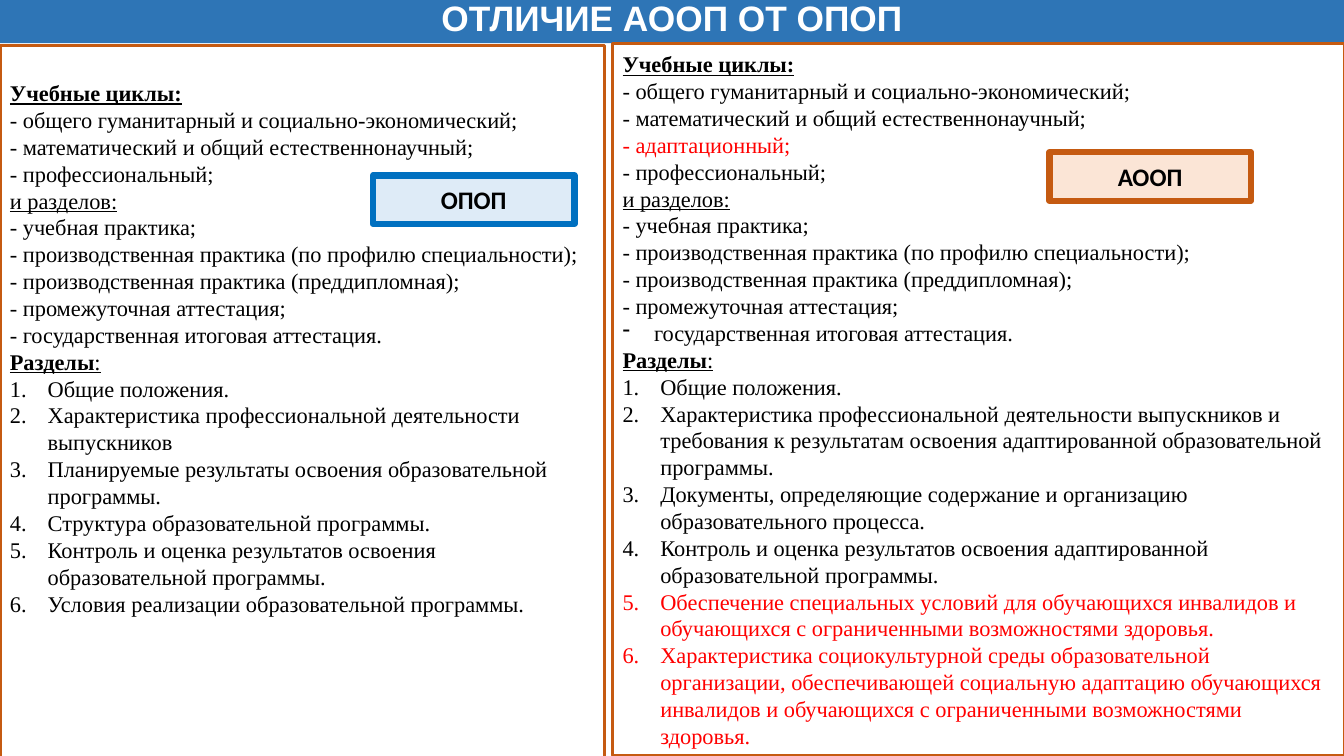
import pptx
import pptx.util
import pptx.dml.color
import pptx.enum.shapes
import pptx.enum.text
import pptx.oxml.ns
import lxml.etree
from dataclasses import dataclass
from typing import Any, Optional

Pt = pptx.util.Pt
ALIGN = pptx.enum.text.PP_ALIGN


@dataclass(frozen=True)
class Theme:
    blue: str = "2E75B6"
    rust: str = "C55A11"
    azure: str = "0070C0"
    sky: str = "DEEBF7"
    peach: str = "FBE5D6"
    white: str = "FFFFFF"
    black: str = "000000"
    red: str = "FF0000"
    head: float = 25.2
    body: float = 16
    label: float = 18
    pitch: float = 19.2


LOOK = Theme()


@dataclass(frozen=True)
class Line:
    text: str
    color: str = LOOK.black
    bold: bool = False
    under: bool = False
    tail: str = ""
    mark: str = ""
    indent: float = 0


@dataclass(frozen=True)
class Box:
    left: float
    top: float
    width: float
    height: float
    fill: str
    edge: Optional[str] = None
    weight: float = 0


@dataclass(frozen=True)
class Panel:
    box: Box
    lines: list[Line]
    foot: float
    label: str
    tag: Box


def tint(code: str) -> pptx.dml.color.RGBColor:
    return pptx.dml.color.RGBColor.from_string(code)


def write(para: Any, text: str, *, size: float, font: str, color: str,
          bold: bool = False, under: bool = False) -> None:
    run = para.add_run()
    run.text = text
    run.font.size = Pt(size)
    run.font.name = font
    run.font.bold = bold
    run.font.underline = under
    run.font.color.rgb = tint(color)


def draw(slide: Any, box: Box) -> Any:
    shape = slide.shapes.add_shape(
        pptx.enum.shapes.MSO_SHAPE.RECTANGLE,
        Pt(box.left), Pt(box.top), Pt(box.width), Pt(box.height))
    shape.shadow.inherit = False
    shape.fill.solid()
    shape.fill.fore_color.rgb = tint(box.fill)
    if box.edge:
        shape.line.color.rgb = tint(box.edge)
        shape.line.width = Pt(box.weight)
    else:
        shape.line.fill.background()
    frame = shape.text_frame
    frame.word_wrap = True
    frame.vertical_anchor = pptx.enum.text.MSO_ANCHOR.MIDDLE
    return frame


def mark(para: Any, line: Line) -> None:
    props = para._p.get_or_add_pPr()
    props.set("marL", str(Pt(line.indent)))
    props.set("indent", str(-Pt(line.indent)))
    kind, key = ("a:buAutoNum", "type") if line.mark == "arabicPeriod" else ("a:buChar", "char")
    node = lxml.etree.SubElement(props, pptx.oxml.ns.qn(kind))
    node.set(key, line.mark)


def fill(frame: Any, lines: list[Line]) -> None:
    for rank, line in enumerate(lines):
        para = frame.add_paragraph() if rank else frame.paragraphs[0]
        para.alignment = ALIGN.LEFT
        para.line_spacing = Pt(LOOK.pitch)
        if line.mark:
            mark(para, line)
        form = dict(size=LOOK.body, font="Times New Roman", color=line.color, under=line.under)
        write(para, line.text, bold=line.bold, **form)
        if line.tail:
            write(para, line.tail, **form)


def title(frame: Any, text: str, **form: Any) -> Any:
    para = frame.paragraphs[0]
    para.alignment = ALIGN.CENTER
    write(para, text, bold=True, **form)
    return para


def place(slide: Any, panel: Panel) -> None:
    frame = draw(slide, panel.box)
    frame.margin_bottom = Pt(panel.foot)
    fill(frame, panel.lines)
    title(draw(slide, panel.tag), panel.label,
          size=LOOK.label, font="Calibri", color=LOOK.black)


def item(text: str, color: str = LOOK.black) -> Line:
    return Line(text, color, mark="arabicPeriod", indent=27)


START = [
    Line("Учебные циклы:", bold=True, under=True),
    Line("- общего гуманитарный и социально-экономический;"),
    Line("- математический и общий естественнонаучный;"),
]
CORE = [
    Line("- профессиональный;"),
    Line("и разделов:", under=True),
    Line("- учебная практика;"),
    Line("- производственная практика (по профилю специальности);"),
    Line("- производственная практика (преддипломная);"),
    Line("- промежуточная аттестация;"),
]
PARTS = [
    Line("Разделы", bold=True, under=True, tail=":"),
    item("Общие положения."),
]
RIGHT = [
    *START,
    Line("- адаптационный;", LOOK.red),
    *CORE,
    Line("государственная итоговая аттестация.", mark="-", indent=22.5),
    *PARTS,
    item("Характеристика профессиональной деятельности выпускников и требования к результатам освоения адаптированной образовательной программы."),
    item("Документы, определяющие содержание и организацию образовательного процесса."),
    item("Контроль и оценка результатов освоения адаптированной образовательной программы."),
    item("Обеспечение специальных условий для обучающихся инвалидов и обучающихся с ограниченными возможностями здоровья.", LOOK.red),
    item("Характеристика социокультурной среды образовательной организации, обеспечивающей социальную адаптацию обучающихся инвалидов и обучающихся с ограниченными возможностями здоровья.", LOOK.red),
]
LEFT = [
    *START,
    *CORE,
    Line("- государственная итоговая аттестация."),
    *PARTS,
    item("Характеристика профессиональной деятельности выпускников"),
    item("Планируемые результаты освоения образовательной программы."),
    item("Структура образовательной программы."),
    item("Контроль и оценка результатов освоения образовательной программы."),
    item("Условия реализации образовательной программы."),
]
PANELS = [
    Panel(Box(437.6, 31, 522.6, 509, LOOK.white, LOOK.rust, 2.25), RIGHT, 3.6,
          "АООП", Box(749.6, 108.8, 144, 34.6, LOOK.peach, LOOK.rust, 4.5)),
    Panel(Box(0, 32.4, 432, 509, LOOK.white, LOOK.rust, 2.25), LEFT, 80.4,
          "ОПОП", Box(266.4, 125.3, 144, 34.6, LOOK.sky, LOOK.azure, 4.5)),
]


def main() -> None:
    deck = pptx.Presentation()
    deck.slide_width, deck.slide_height = Pt(960), Pt(540)
    slide = deck.slides.add_slide(deck.slide_layouts[6])
    head = title(draw(slide, Box(0, -2.2, 960, 33.1, LOOK.blue)), "ОТЛИЧИЕ АООП ОТ ОПОП",
                 size=LOOK.head, font="Arial", color=LOOK.white)
    head.line_spacing = 0.9
    for panel in PANELS:
        place(slide, panel)
    deck.save("out.pptx")


if __name__ == "__main__":
    main()
